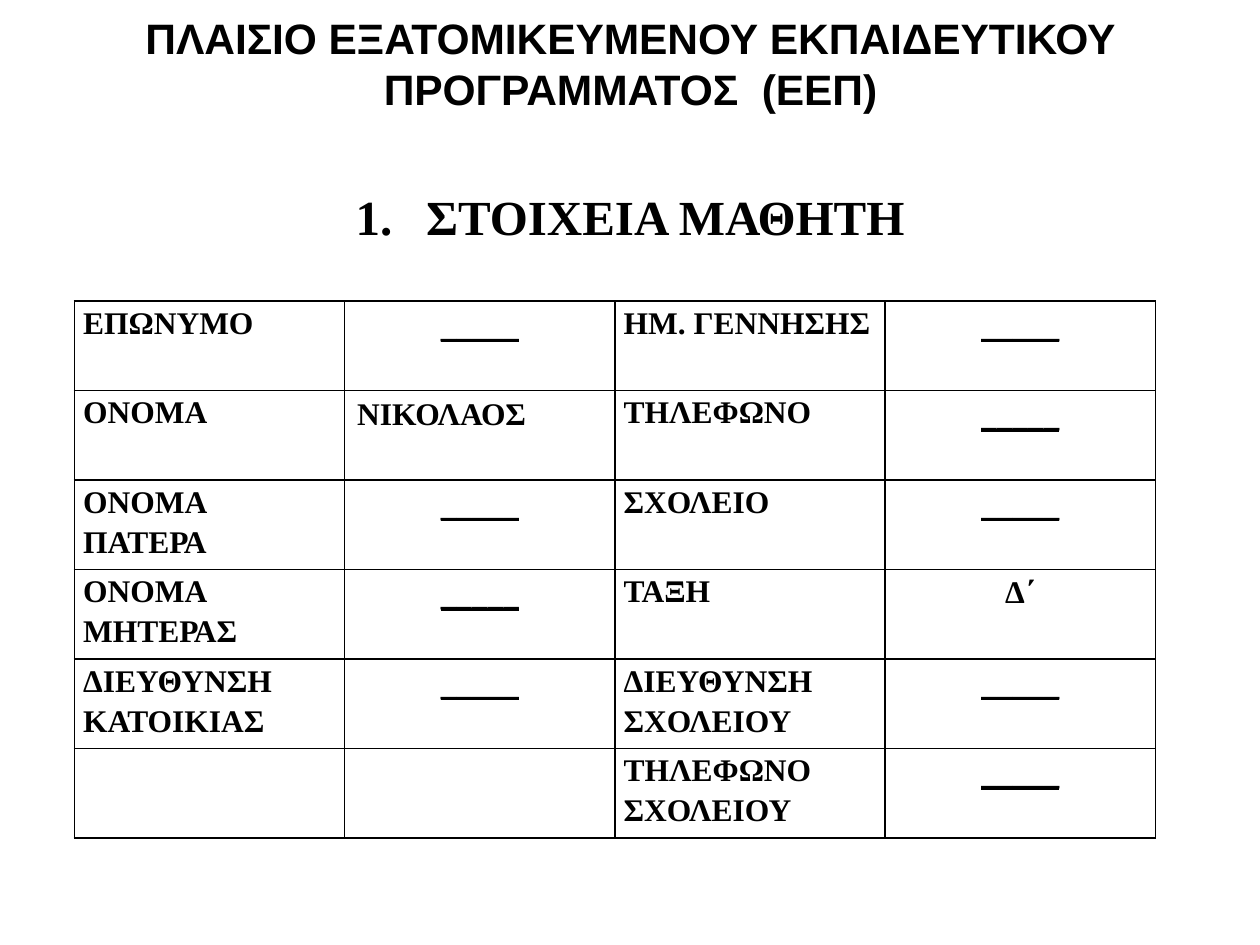
from dataclasses import dataclass

from lxml.etree import SubElement
from pptx import Presentation
from pptx.dml.color import RGBColor
from pptx.enum.text import MSO_ANCHOR as Anchor, PP_ALIGN as Align
from pptx.oxml.ns import qn
from pptx.util import Inches, Pt


@dataclass(frozen=True)
class Theme:
    """Colours, fonts and type sizes of the slide."""
    ink: RGBColor = RGBColor(0, 0, 0)
    paper: RGBColor = RGBColor(255, 255, 255)
    title_font: str = "Arial"
    text_font: str = "Times New Roman"
    blank_font: str = "Calibri"
    title_size: float = 24.3
    heading_size: float = 28
    cell_size: float = 18
    border: float = 1


THEME = Theme()
BLANK = "_____"
STUDENT_ROWS = [
    ("ΕΠΩΝΥΜΟ", BLANK, "ΗΜ. ΓΕΝΝΗΣΗΣ", BLANK),
    ("ΟΝΟΜΑ", "ΝΙΚΟΛΑΟΣ", "ΤΗΛΕΦΩΝΟ", BLANK),
    ("ΟΝΟΜΑ ΠΑΤΕΡΑ", BLANK, "ΣΧΟΛΕΙΟ", BLANK),
    ("ΟΝΟΜΑ ΜΗΤΕΡΑΣ", BLANK, "ΤΑΞΗ", "Δ΄"),
    ("ΔΙΕΥΘΥΝΣΗ ΚΑΤΟΙΚΙΑΣ", BLANK, "ΔΙΕΥΘΥΝΣΗ\nΣΧΟΛΕΙΟΥ", BLANK),
    ("", "", "ΤΗΛΕΦΩΝΟ\nΣΧΟΛΕΙΟΥ", BLANK),
]


def write(frame, text, font=THEME.text_font, size=THEME.cell_size,
          align=Align.LEFT, spacing=None, underline=False, numbered=False):
    """Write bold text into a frame, one paragraph per line."""
    frame.word_wrap = True
    for index, line in enumerate(text.split("\n")):
        paragraph = frame.add_paragraph() if index else frame.paragraphs[0]
        paragraph.alignment = align
        if spacing:
            paragraph.line_spacing = spacing
        if numbered:
            properties = paragraph._p.get_or_add_pPr()
            properties.set("marL", str(Inches(0.56)))
            properties.set("indent", str(-Inches(0.56)))
            SubElement(properties, qn("a:buFont"), typeface="+mj-lt")
            SubElement(properties, qn("a:buAutoNum"), type="arabicPeriod")
        run = paragraph.add_run()
        run.text = line
        run.font.name = font
        run.font.size = Pt(size)
        run.font.bold = True
        run.font.underline = underline
        run.font.color.rgb = THEME.ink


def add_title(slide, left, top, width, height):
    """Place the programme title in the given box."""
    frame = slide.shapes.add_textbox(left, top, width, height).text_frame
    frame.vertical_anchor = Anchor.TOP
    frame.margin_top = Inches(0.1)
    write(frame, "ΠΛΑΙΣΙΟ ΕΞΑΤΟΜΙΚΕΥΜΕΝΟΥ ΕΚΠΑΙΔΕΥΤΙΚΟΥ ΠΡΟΓΡΑΜΜΑΤΟΣ  (ΕΕΠ)",
          font=THEME.title_font, size=THEME.title_size, align=Align.CENTER,
          spacing=Pt(29))


def add_heading(slide, left, top, width, height):
    """Place the numbered section heading in the given box."""
    frame = slide.shapes.add_textbox(left, top, width, height).text_frame
    frame.margin_top = Inches(0.64)
    write(frame, "ΣΤΟΙΧΕΙΑ ΜΑΘΗΤΗ", size=THEME.heading_size,
          align=Align.CENTER, numbered=True)


def style_cell(cell):
    """Give a cell a plain fill and thin borders on all sides."""
    properties = cell._tc.get_or_add_tcPr()
    for side in ("lnL", "lnR", "lnT", "lnB"):
        line = SubElement(properties, qn(f"a:{side}"), w=str(Pt(THEME.border)))
        fill = SubElement(line, qn("a:solidFill"))
        SubElement(fill, qn("a:srgbClr"), val=str(THEME.ink))
    cell.fill.solid()
    cell.fill.fore_color.rgb = THEME.paper


def add_student_table(slide, left, top, width, height):
    """Place the table of student details in the given box."""
    table = slide.shapes.add_table(
        len(STUDENT_ROWS), len(STUDENT_ROWS[0]), left, top, width, height).table
    table.first_row = table.horz_banding = False
    for row, details in enumerate(STUDENT_ROWS):
        for column, detail in enumerate(details):
            cell = table.cell(row, column)
            style_cell(cell)
            if not detail:
                continue
            if column % 2 == 0:
                cell.margin_left = cell.margin_right = Inches(0.07)
                cell.margin_top = cell.margin_bottom = 0
                write(cell.text_frame, detail, spacing=1.15)
            elif detail == BLANK:
                write(cell.text_frame, detail, font=THEME.blank_font,
                      align=Align.CENTER, underline=True)
            else:
                write(cell.text_frame, detail,
                      align=Align.LEFT if column == 1 else Align.CENTER)


def main():
    """Build the slide and save it."""
    deck = Presentation()
    deck.slide_width, deck.slide_height = Inches(10), Inches(7.5)
    slide = deck.slides.add_slide(deck.slide_layouts[6])
    add_title(slide, Inches(0.51), 0, Inches(8.99), Inches(0.84))
    add_heading(slide, Inches(0.12), Inches(0.84), Inches(9.76), Inches(6.54))
    add_student_table(slide, Inches(0.59), Inches(2.39), Inches(8.58), Inches(4.26))
    deck.save("out.pptx")


if __name__ == "__main__":
    main()
